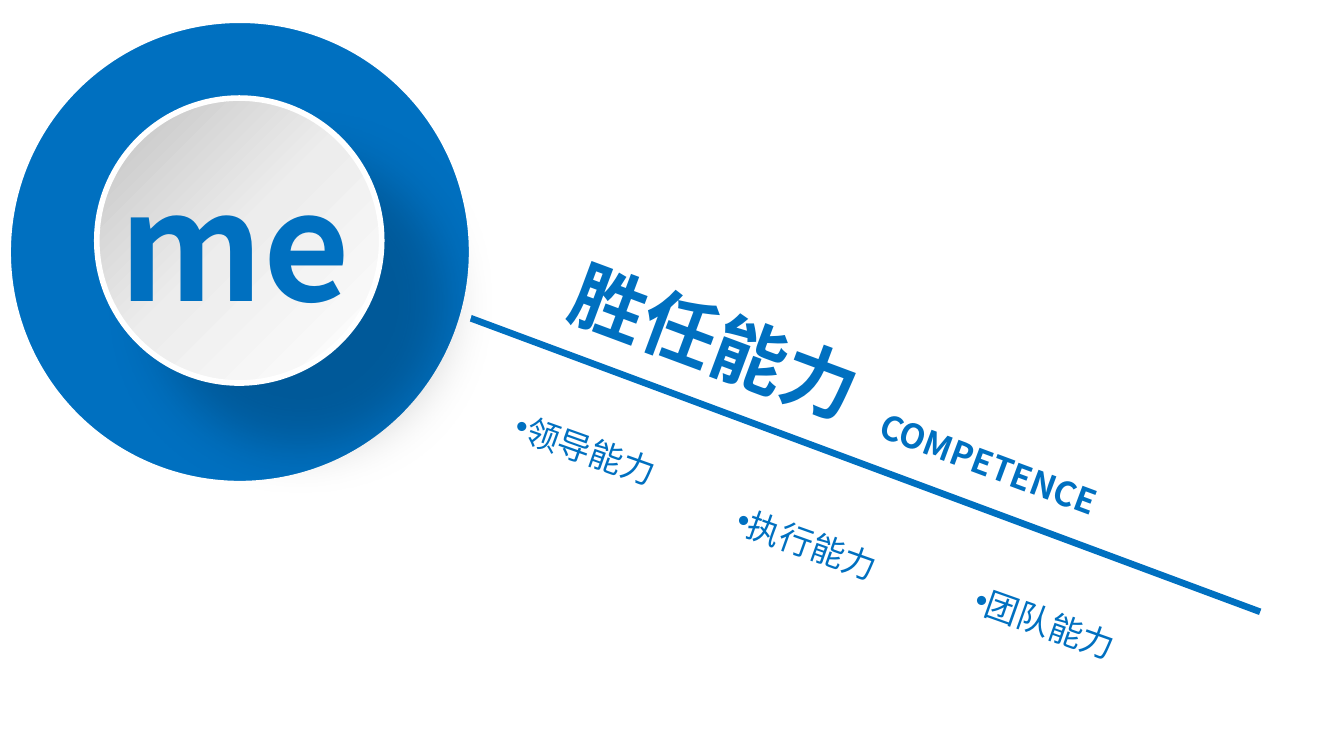
import pptx
import pptx.dml.color
import pptx.enum.shapes
import pptx.enum.text
import pptx.oxml
import pptx.oxml.ns
import pptx.shapes.autoshape
import pptx.slide
import pptx.util
from dataclasses import dataclass

Inches = pptx.util.Inches
Pt = pptx.util.Pt
qn = pptx.oxml.ns.qn
Shape = pptx.shapes.autoshape.Shape
ShapeType = pptx.enum.shapes.MSO_SHAPE
Align = pptx.enum.text.PP_ALIGN
Anchor = pptx.enum.text.MSO_ANCHOR

SLIDE_WIDTH = 10
SLIDE_HEIGHT = SLIDE_WIDTH * 9 / 16
FONT = "Noto Sans CJK SC"
COLORS = {"blue": "0070C0", "white": "FFFFFF", "shadow": "000000"}
GRADIENT = [(0, "C0C0C0"), (49, "EDEDED"), (100, "FFFFFF")]
NAMESPACE = pptx.oxml.ns.nsdecls("a")
TILT = 20.4


@dataclass
class Box:
    left: float
    top: float
    width: float
    height: float
    rotation: float = 0


@dataclass
class Label:
    text: str
    box: Box
    size: int
    bold: bool = True
    align: Align = Align.LEFT
    margins: tuple[float, float] = (0.07, 0.04)
    bullet: bool = False


def ability(text: str, left: float, top: float, rotation: float) -> Label:
    return Label(text, Box(left, top, 1.41, 0.43, rotation), 18, bold=False,
                 margins=(0.1, 0.05), bullet=True)


TITLE = Label("胜任能力", Box(4.11, 2.35, 3.47, 0.75, TILT), 40)
LABELS = [
    Label("me", Box(0.84, 1.13, 1.82, 1.35), 80, align=Align.CENTER, margins=(0, 0)),
    Label("COMPETENCE", Box(6.4, 3.48, 3.1, 0.38, TILT), 18),
    ability("领导能力", 3.72, 3.12, 19.6),
    ability("执行能力", 5.37, 3.82, 19.6),
    ability("团队能力", 7.14, 4.41, 19.5),
]


def rgb(name: str) -> pptx.dml.color.RGBColor:
    return pptx.dml.color.RGBColor.from_string(COLORS[name])


def place(shape: Shape, box: Box) -> None:
    shape.left, shape.top = Inches(box.left), Inches(box.top)
    shape.width, shape.height = Inches(box.width), Inches(box.height)
    shape.rotation = box.rotation


def add_blue_shape(slide: pptx.slide.Slide, kind: ShapeType, box: Box,
                   outline: float = 0) -> Shape:
    """Add a shadowless blue shape, with a white outline if a width is given."""
    shape = slide.shapes.add_shape(kind, 0, 0, 0, 0)
    place(shape, box)
    shape.shadow.inherit = False
    shape.fill.solid()
    shape.fill.fore_color.rgb = rgb("blue")
    if outline:
        shape.line.color.rgb = rgb("white")
        shape.line.width = Pt(outline)
    else:
        shape.line.fill.background()
    return shape


def make_button(shape: Shape) -> None:
    """Give a shape the grey gradient and the soft shadow to the lower right."""
    properties = shape.element.spPr
    stops = "".join(
        f'<a:gs pos="{position * 1000}"><a:srgbClr val="{color}"/></a:gs>'
        for position, color in GRADIENT)
    properties.replace(properties.find(qn("a:solidFill")), pptx.oxml.parse_xml(
        f'<a:gradFill {NAMESPACE} rotWithShape="1"><a:gsLst>{stops}</a:gsLst>'
        '<a:lin ang="2700000" scaled="0"/></a:gradFill>'))
    properties.find(qn("a:effectLst")).append(pptx.oxml.parse_xml(
        f'<a:outerShdw {NAMESPACE} blurRad="{Pt(29)}" dist="{Pt(46)}" dir="2700000" '
        f'algn="tl" rotWithShape="0"><a:srgbClr val="{COLORS["shadow"]}">'
        '<a:alpha val="20000"/></a:srgbClr></a:outerShdw>'))


def write_label(shape: Shape, label: Label) -> None:
    place(shape, label.box)
    frame = shape.text_frame
    frame.text = label.text
    frame.word_wrap = not label.bullet
    frame.auto_size = pptx.enum.text.MSO_AUTO_SIZE.SHAPE_TO_FIT_TEXT
    frame.vertical_anchor = Anchor.MIDDLE if label.bullet else Anchor.TOP
    frame.margin_left = frame.margin_right = Inches(label.margins[0])
    frame.margin_top = frame.margin_bottom = Inches(label.margins[1])
    paragraph = frame.paragraphs[0]
    paragraph.alignment = label.align
    properties = paragraph._p.get_or_add_pPr()
    if label.bullet:
        paragraph.line_spacing = 1.2
        properties.set("marL", "0")
        properties.set("indent", str(Inches(-0.2)))
        properties.append(pptx.oxml.parse_xml(f'<a:buFont {NAMESPACE} typeface="Arial"/>'))
        properties.append(pptx.oxml.parse_xml(f'<a:buChar {NAMESPACE} char="•"/>'))
    font = paragraph.font
    font.name = FONT
    font.size = Pt(label.size)
    font.bold = label.bold
    font.color.rgb = rgb("blue")
    latin = properties.find(qn("a:defRPr")).find(qn("a:latin"))
    latin.addnext(pptx.oxml.parse_xml(f'<a:ea {NAMESPACE} typeface="{FONT}"/>'))


def main() -> None:
    presentation = pptx.Presentation()
    presentation.slide_width = Inches(SLIDE_WIDTH)
    presentation.slide_height = Inches(SLIDE_HEIGHT)
    slide = presentation.slides.add_slide(presentation.slide_layouts[5])
    add_blue_shape(slide, ShapeType.RECTANGLE, Box(3.11, 3.4, 6.47, 0.05, TILT))
    add_blue_shape(slide, ShapeType.OVAL, Box(0.04, 0.13, 3.49, 3.49, 23.4), outline=6)
    make_button(add_blue_shape(slide, ShapeType.OVAL, Box(0.72, 0.73, 2.12, 2.12), outline=3))
    write_label(slide.shapes.title, TITLE)
    for label in LABELS:
        write_label(slide.shapes.add_textbox(0, 0, 0, 0), label)
    presentation.save("out.pptx")


if __name__ == "__main__":
    main()
